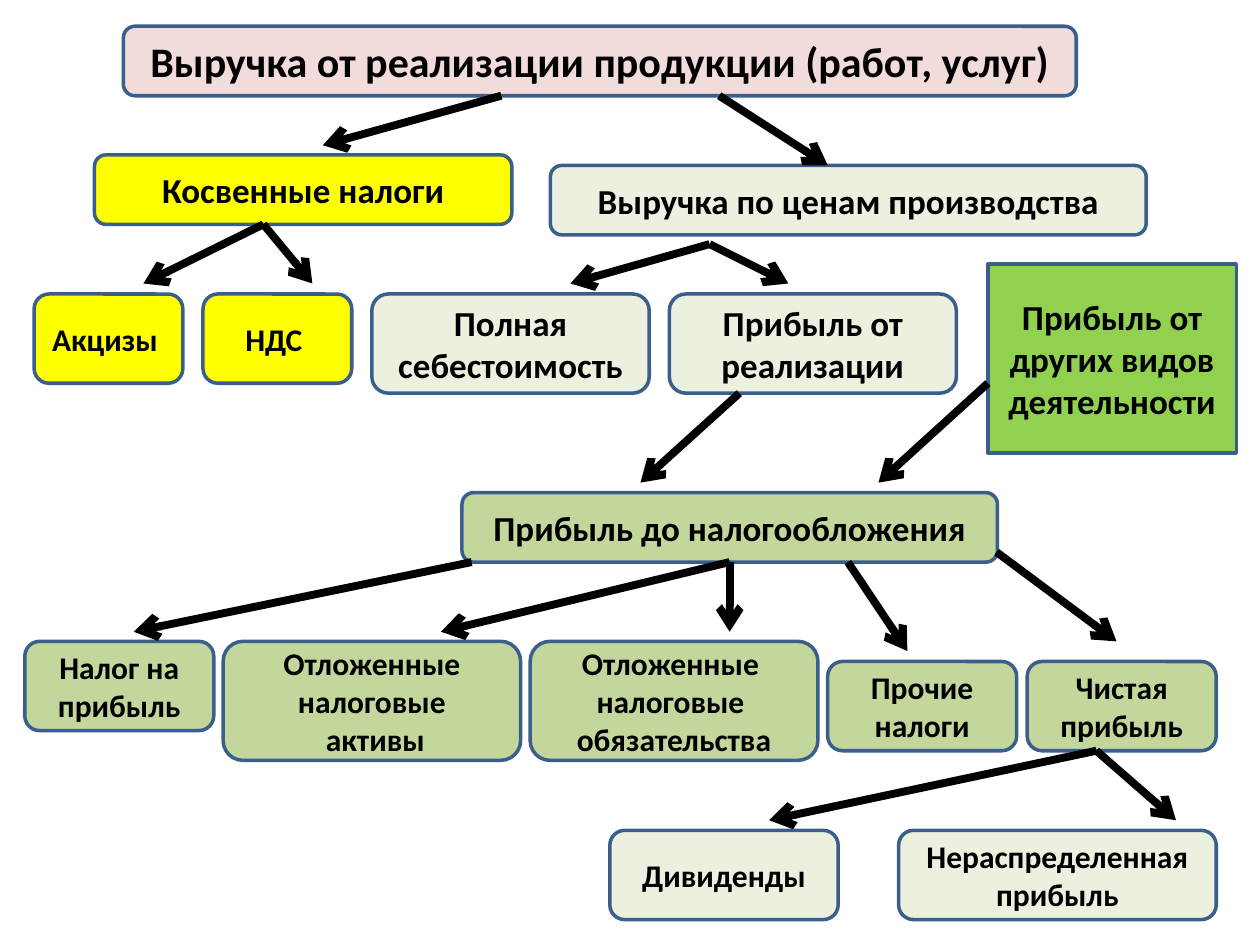
from typing import NamedTuple, Optional

from lxml import etree
from pptx import Presentation
from pptx.dml.color import RGBColor
from pptx.enum.shapes import MSO_CONNECTOR, MSO_SHAPE
from pptx.enum.text import MSO_ANCHOR, PP_ALIGN
from pptx.oxml.ns import qn
from pptx.util import Pt

ROUNDED = MSO_SHAPE.ROUNDED_RECTANGLE
SQUARE = MSO_SHAPE.RECTANGLE
STRAIGHT = MSO_CONNECTOR.STRAIGHT
MIDDLE = MSO_ANCHOR.MIDDLE
CENTER = PP_ALIGN.CENTER
BOTTOM_SIDE = 2
FONT = "Calibri"
COLORS = {
    "pink": "F2DCDB",
    "yellow": "FFFF00",
    "pale": "EBF1DE",
    "olive": "C3D69B",
    "green": "92D050",
    "outline": "3A5F8C",
    "black": "000000",
}

BAR, LOW, MEDIUM, TALL = 39.7, 51, 56.7, 68
SPLIT_TOP, TAX_TOP, PROFIT_TOP, USE_TOP = 168, 366.5, 378, 474.5


class Block(NamedTuple):
    text: str
    left: float
    top: float
    width: float
    height: float
    color: str
    size: int = 18
    preset: int = ROUNDED


class Arrow(NamedTuple):
    start: tuple[float, float]
    end: tuple[float, float]
    source: Optional[str] = None


PRETAX = "Прибыль до налогообложения"

BLOCKS = [
    Block("Выручка от реализации продукции (работ, услуг)", 70.5, 15, 544.5, BAR, "pink", 24),
    Block("Косвенные налоги", 54, 88.5, 238.5, BAR, "yellow", 20),
    Block("Выручка по ценам производства", 314.5, 94.5, 340.5, BAR, "pale", 20),
    Block(PRETAX, 264, 281.5, 306, BAR, "olive", 20),
    Block("Акцизы ", 19.5, SPLIT_TOP, 85, LOW, "yellow"),
    Block("Полная себестоимость", 212.5, SPLIT_TOP, 158.5, MEDIUM, "pale", 20),
    Block("НДС ", 116, SPLIT_TOP, 85, LOW, "yellow"),
    Block("Прибыль от реализации", 382.5, SPLIT_TOP, 164, MEDIUM, "pale", 20),
    Block("Прибыль от других видов деятельности", 564.5, 151, 142, 108, "green", 20, SQUARE),
    Block("Налог на прибыль", 14.2, TAX_TOP, 108, LOW, "olive"),
    Block("Отложенные налоговые\n активы", 127.5, TAX_TOP, 170, TALL, "olive"),
    Block("Отложенные \nналоговые \nобязательства", 303, TAX_TOP, 164.4, TALL, "olive"),
    Block("Прочие\nналоги", 473, PROFIT_TOP, 108, LOW, "olive"),
    Block("Чистая прибыль", 587, PROFIT_TOP, 108, LOW, "olive"),
    Block("Дивиденды", 348.5, USE_TOP, 130.5, LOW, "pale"),
    Block("Нераспределенная прибыль", 513.5, USE_TOP, 181.5, LOW, "pale"),
]

ARROWS = [
    Arrow((286.5, 54.7), (184.5, 83)),
    Arrow((411, 54.7), (473, 94.5)),
    Arrow((150.5, 128.2), (82, 162)),
    Arrow((150.5, 128.2), (178.5, 162)),
    Arrow((405.5, 139.5), (326, 162)),
    Arrow((405.5, 139.5), (450.5, 162)),
    Arrow((422.5, 224.7), (366, 275.8)),
    Arrow((564.5, 219), (502, 275.8)),
    Arrow((269.5, 321.2), (76.5, 361)),
    Arrow((417, 321.2), (252, 361), PRETAX),
    Arrow((417, 321.2), (417, 361), PRETAX),
    Arrow((484.5, 321.2), (518.5, 372)),
    Arrow((569.5, 315.5), (638, 366.5)),
    Arrow((626.5, 429), (439.5, 468.7)),
    Arrow((626.5, 429), (672, 468.7)),
]


def rgb(name: str) -> RGBColor:
    """Return the named colour."""
    return RGBColor.from_string(COLORS[name])


def draw_block(page, block: Block):
    """Draw one labelled box and return it."""
    box = page.shapes.add_shape(
        block.preset, Pt(block.left), Pt(block.top), Pt(block.width), Pt(block.height)
    )
    box.shadow.inherit = False
    box.fill.solid()
    box.fill.fore_color.rgb = rgb(block.color)
    box.line.color.rgb = rgb("outline")
    box.line.width = Pt(2)
    frame = box.text_frame
    frame.word_wrap = True
    frame.vertical_anchor = MIDDLE
    for index, text in enumerate(block.text.split("\n")):
        para = frame.add_paragraph() if index else frame.paragraphs[0]
        para.alignment = CENTER
        span = para.add_run()
        span.text = text
        span.font.name = FONT
        span.font.size = Pt(block.size)
        span.font.bold = True
        span.font.color.rgb = rgb("black")
    return box


def draw_arrow(page, arrow: Arrow, boxes: dict) -> None:
    """Draw one arrow, joined to its source box if it has one."""
    points = [Pt(value) for value in arrow.start + arrow.end]
    connector = page.shapes.add_connector(STRAIGHT, *points)
    if arrow.source:
        connector.begin_connect(boxes[arrow.source], BOTTOM_SIDE)
    connector.line.color.rgb = rgb("black")
    connector.line.width = Pt(4.5)
    properties = connector.element.spPr
    etree.SubElement(properties.find(qn("a:ln")), qn("a:tailEnd"), type="arrow")
    etree.SubElement(properties, qn("a:effectLst"))


def main() -> None:
    """Build the profit distribution slide."""
    deck = Presentation()
    deck.slide_width, deck.slide_height = Pt(720), Pt(540)
    page = deck.slides.add_slide(deck.slide_layouts[6])
    boxes = {block.text: draw_block(page, block) for block in BLOCKS}
    for arrow in ARROWS:
        draw_arrow(page, arrow, boxes)
    deck.save("out.pptx")


if __name__ == "__main__":
    main()
